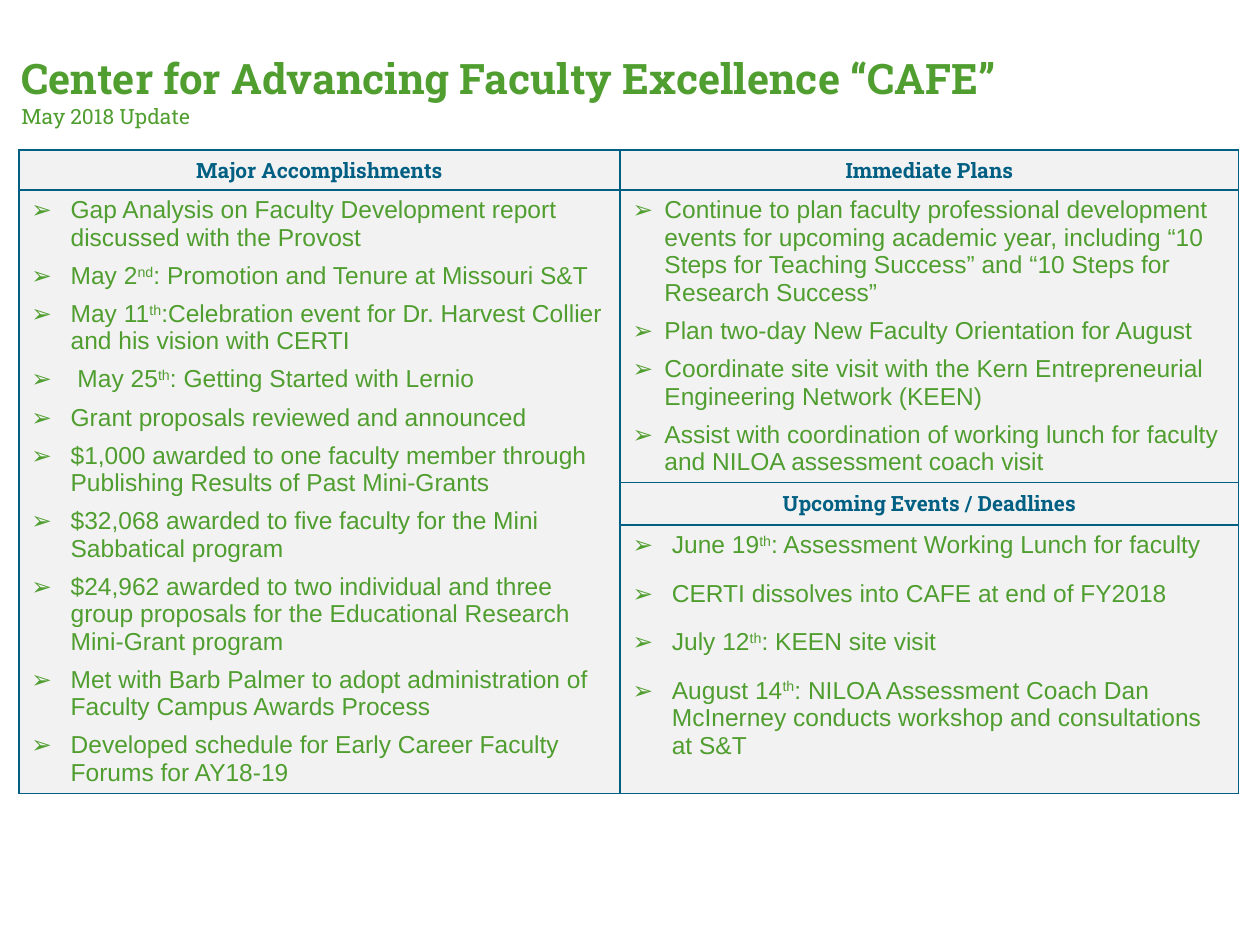
from dataclasses import dataclass

from lxml.etree import SubElement
from pptx import Presentation
from pptx.dml.color import RGBColor
from pptx.enum.text import MSO_ANCHOR, PP_ALIGN
from pptx.oxml.ns import qn
from pptx.util import Cm, Pt

GREEN = RGBColor(0x50, 0x9E, 0x2F)
BLUE = RGBColor(0x00, 0x5F, 0x83)
GREY = RGBColor(0xF2, 0xF2, 0xF2)

TITLE = {"name": "Roboto Slab", "size": Pt(24), "bold": True}
DATE = {"name": "Roboto Slab", "size": Pt(12), "bold": False}
HEAD = {"name": "Roboto Slab", "size": Pt(12), "bold": True}
BODY = {"name": "Arial", "size": Pt(14), "bold": False}

WIDTHS = (Cm(12.12), Cm(12.47))
HEIGHTS = (Cm(0.81), Cm(5.89), Cm(0.86), Cm(5.41))


@dataclass
class Panel:
    """A table cell: a heading, or a bullet list when indent is set."""
    row: int
    col: int
    lines: tuple
    indent: int = 0
    gap: int = 0
    anchor: MSO_ANCHOR = MSO_ANCHOR.MIDDLE


# Text between ^ marks is raised
PANELS = (
    Panel(0, 0, ("Major Accomplishments",)),
    Panel(0, 1, ("Immediate Plans",)),
    Panel(1, 0, (
        "Gap Analysis on Faculty Development report discussed with the Provost",
        "May 2^nd^: Promotion and Tenure at Missouri S&T",
        "May 11^th^:Celebration event for Dr. Harvest Collier and his vision with CERTI",
        " May 25^th^: Getting Started with Lernio",
        "Grant proposals reviewed and announced",
        "$1,000 awarded to one faculty member through Publishing Results of Past Mini-Grants",
        "$32,068 awarded to five faculty for the Mini Sabbatical program",
        "$24,962 awarded to two individual and three group proposals for the "
        "Educational Research Mini-Grant program",
        "Met with Barb Palmer to adopt administration of Faculty Campus Awards Process",
        "Developed schedule for Early Career Faculty Forums for AY18-19",
    ), Cm(0.79), Pt(6), MSO_ANCHOR.TOP),
    Panel(1, 1, (
        "Continue to plan faculty professional development events for upcoming academic "
        "year, including “10 Steps for Teaching Success” and “10 Steps for Research Success”",
        "Plan two-day New Faculty Orientation for August",
        "Coordinate site visit with the Kern Entrepreneurial Engineering Network (KEEN)",
        "Assist with coordination of working lunch for faculty and NILOA assessment coach visit",
    ), Cm(0.64), Pt(6)),
    Panel(2, 1, ("Upcoming Events / Deadlines",)),
    Panel(3, 1, (
        "June 19^th^: Assessment Working Lunch for faculty",
        "CERTI dissolves into CAFE at end of FY2018",
        "July 12^th^: KEEN site visit",
        "August 14^th^: NILOA Assessment Coach Dan McInerney conducts workshop and "
        "consultations at S&T",
    ), Cm(0.79), Pt(12), MSO_ANCHOR.TOP),
)


def add_runs(para, text: str, style: dict, color: RGBColor) -> None:
    for i, part in enumerate(text.split("^")):
        run = para.add_run()
        run.text = part
        for key, value in style.items():
            setattr(run.font, key, value)
        run.font.color.rgb = color
        if i % 2:
            run._r.get_or_add_rPr().set("baseline", "30000")


def add_bullet(para, indent: int) -> None:
    props = para._p.get_or_add_pPr()
    props.set("marL", str(int(indent)))
    props.set("indent", str(-int(indent)))
    SubElement(SubElement(props, qn("a:buClr")), qn("a:srgbClr"), val=str(GREEN))
    SubElement(props, qn("a:buFont"), typeface="Arial")
    SubElement(props, qn("a:buChar"), char="➢")


def dress_cell(cell) -> None:
    props = cell._tc.get_or_add_tcPr()
    for side in ("lnL", "lnR", "lnT", "lnB"):
        line = SubElement(props, qn(f"a:{side}"), w=str(int(Pt(1))))
        paint = SubElement(line, qn("a:solidFill"))
        SubElement(paint, qn("a:srgbClr"), val=str(BLUE))
    cell.fill.solid()
    cell.fill.fore_color.rgb = GREY


def fill_panel(table, panel: Panel) -> None:
    cell = table.cell(panel.row, panel.col)
    cell.vertical_anchor = panel.anchor
    frame = cell.text_frame
    for i, text in enumerate(panel.lines):
        para = frame.add_paragraph() if i else frame.paragraphs[0]
        if panel.indent:
            add_bullet(para, panel.indent)
            para.space_before = panel.gap if i else Pt(0)
            add_runs(para, text, BODY, GREEN)
        else:
            para.alignment = PP_ALIGN.CENTER
            add_runs(para, text, HEAD, BLUE)


def add_grid(slide) -> None:
    table = slide.shapes.add_table(len(HEIGHTS), len(WIDTHS), Cm(0.38), Cm(3.02),
                                   sum(WIDTHS), sum(HEIGHTS)).table
    table.first_row = table.horz_banding = False
    for col, width in zip(table.columns, WIDTHS):
        col.width = width
    for row, height in zip(table.rows, HEIGHTS):
        row.height = height
    for cell in table.iter_cells():
        dress_cell(cell)
    table.cell(1, 0).merge(table.cell(3, 0))
    for panel in PANELS:
        fill_panel(table, panel)


def add_title(slide) -> None:
    frame = slide.shapes.add_textbox(Cm(0.18), Cm(0.94), Cm(24.97), Cm(1.8)).text_frame
    frame.word_wrap = True
    add_runs(frame.paragraphs[0], "Center for Advancing Faculty Excellence “CAFE”",
             TITLE, GREEN)
    add_runs(frame.add_paragraph(), "May 2018 Update", DATE, GREEN)


def main() -> None:
    deck = Presentation()
    deck.slide_width, deck.slide_height = Cm(25.4), Cm(19.05)
    slide = deck.slides.add_slide(deck.slide_layouts[6])
    add_grid(slide)
    add_title(slide)
    deck.save("out.pptx")


if __name__ == "__main__":
    main()
